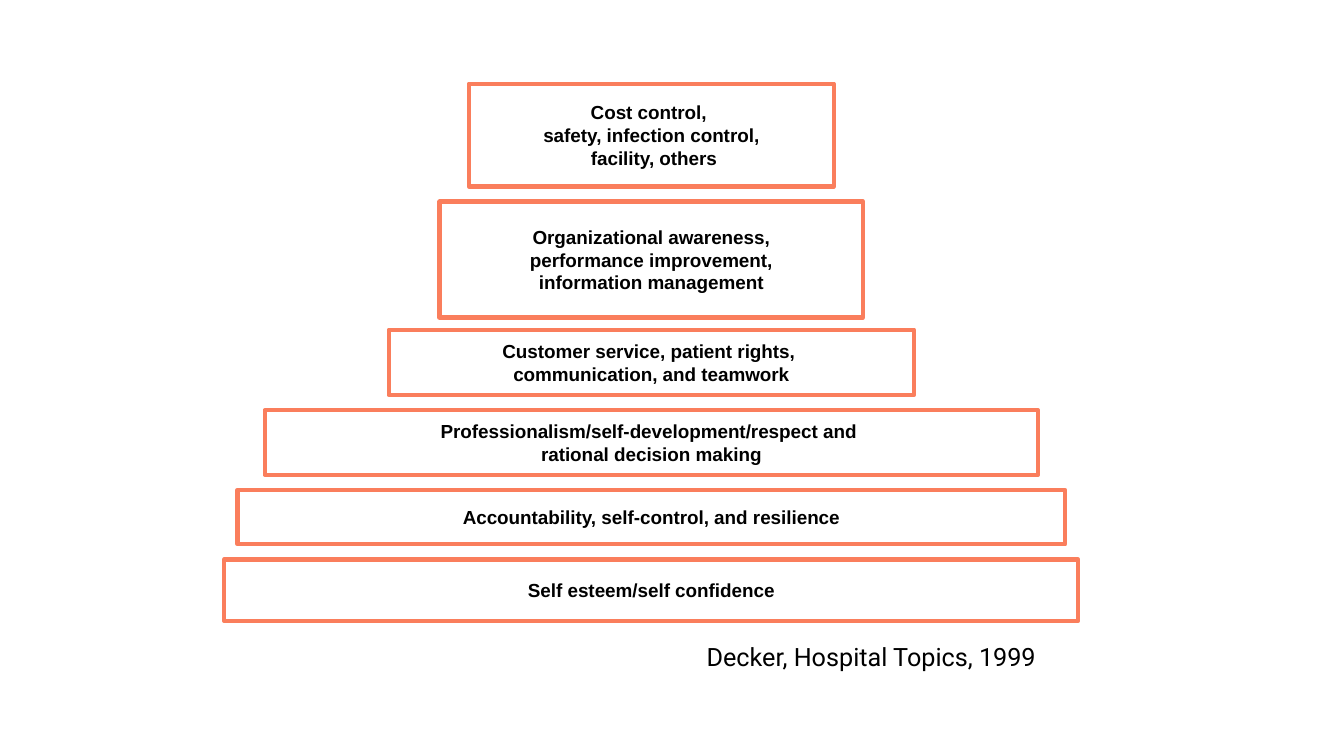
from lxml.etree import SubElement
from pptx import Presentation
from pptx.dml.color import RGBColor
from pptx.enum.shapes import MSO_SHAPE as Shape
from pptx.enum.text import MSO_ANCHOR as Anchor, MSO_AUTO_SIZE as AutoSize, PP_ALIGN as Align
from pptx.oxml.ns import qn
from pptx.util import Inches, Pt

# Content, top level first: text, top, width, height
# (\v is a line break, \n starts a new paragraph)
LEVELS = [
    ("Cost control, \nsafety, infection control,\n facility, others", 0.83, 3.62, 1.02),
    ("Organizational awareness,\v performance improvement, \vinformation management",
     2.0, 4.2, 1.15),
    ("Customer service, patient rights, \vcommunication, and teamwork", 3.27, 5.21, 0.65),
    ("Professionalism/self-development/respect and \vrational decision making",
     4.07, 7.67, 0.64),
    ("Accountability, self-control, and resilience", 4.86, 8.21, 0.54),
    ("Self esteem/self confidence", 5.55, 8.47, 0.61),
]
CITATION = "Decker, Hospital Topics, 1999"
COLORS = {"fill": "FFFFFF", "border": "FA7E5C", "text": "000000"}
AXIS = 6.46  # centre line shared by all levels
LEVEL_SIZE = 13.5


def color(name):
    return RGBColor.from_string(COLORS[name])


def format_text(frame, font, size, bold, align):
    for para in frame.paragraphs:
        para.alignment = align
        for span in para.runs:
            span.font.name = font
            span.font.size = Pt(size)
            span.font.bold = bold
            span.font.color.rgb = color("text")
        # Line breaks carry their own size
        for line_break in para._p.findall(qn("a:br")):
            SubElement(line_break, qn("a:rPr"), sz=str(int(size * 100)))


def add_level(page, text, top, width, height):
    box = page.shapes.add_shape(Shape.RECTANGLE, Inches(AXIS - width / 2), Inches(top),
                                Inches(width), Inches(height))
    box.shadow.inherit = False
    box.fill.solid()
    box.fill.fore_color.rgb = color("fill")
    box.line.color.rgb = color("border")
    box.line.width = Pt(3)
    frame = box.text_frame
    frame.word_wrap = False
    frame.vertical_anchor = Anchor.MIDDLE
    frame.text = text
    format_text(frame, "Arial", LEVEL_SIZE, True, Align.CENTER)


deck = Presentation()
deck.slide_width, deck.slide_height = Inches(13.33), Inches(7.5)
page = deck.slides.add_slide(deck.slide_layouts[6])

# Pyramid, built from the base up
for level in reversed(LEVELS):
    add_level(page, *level)

# Citation
note = page.shapes.add_textbox(Inches(6.91), Inches(6.31), Inches(3.78), Inches(0.4))
note.text_frame.word_wrap = True
note.text_frame.auto_size = AutoSize.SHAPE_TO_FIT_TEXT
note.text_frame.text = CITATION
format_text(note.text_frame, "Roboto", 18, False, Align.LEFT)

deck.save("out.pptx")
